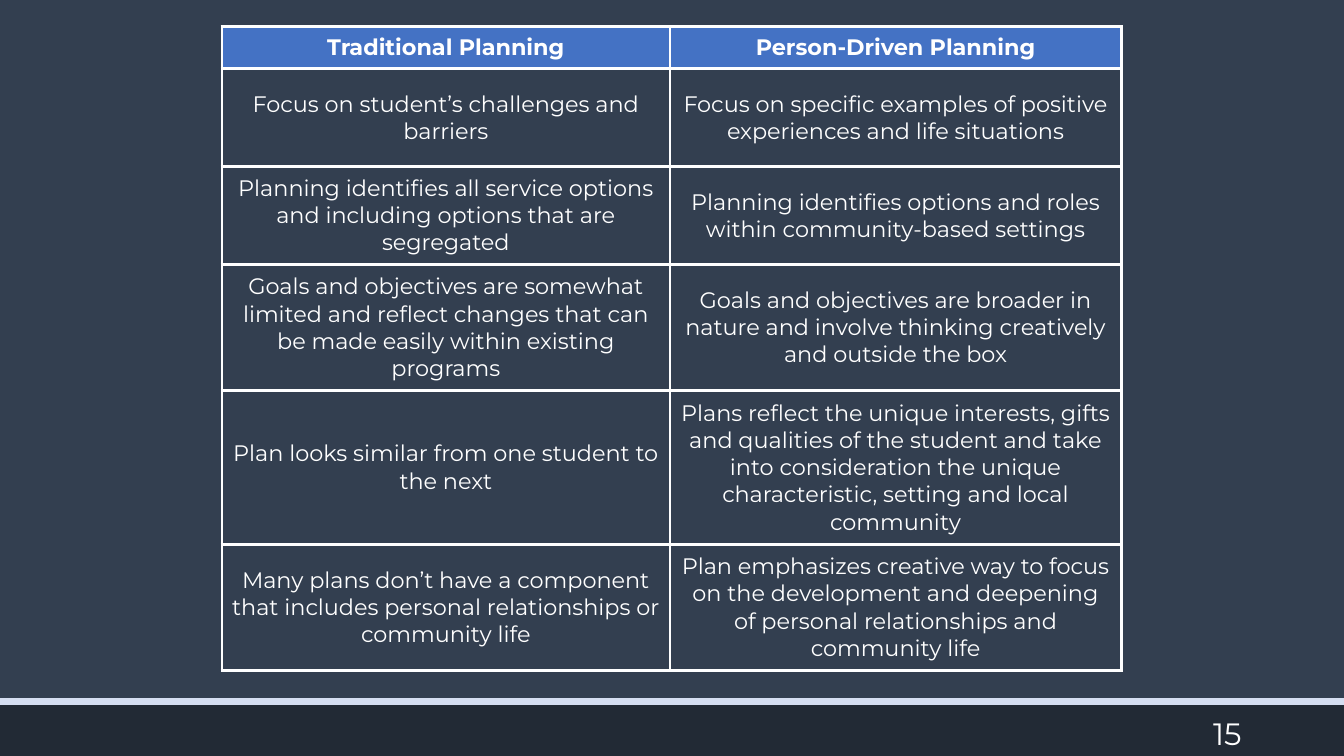
import pptx
import pptx.dml.color
import pptx.enum.shapes
import pptx.enum.text
import pptx.oxml
import pptx.oxml.ns
import pptx.util

Pt = pptx.util.Pt
RGBColor = pptx.dml.color.RGBColor
Align = pptx.enum.text.PP_ALIGN
Anchor = pptx.enum.text.MSO_ANCHOR

# Content
COMPARISON = [
    ("Traditional Planning", "Person-Driven Planning"),
    ("Focus on student’s challenges and barriers",
     "Focus on specific examples of positive experiences and life situations"),
    ("Planning identifies all service options and including options that are segregated",
     "Planning identifies options and roles within community-based settings"),
    ("Goals and objectives are somewhat limited and reflect changes that can be made "
     "easily within existing programs",
     "Goals and objectives are broader in nature and involve thinking creatively "
     "and outside the box"),
    ("Plan looks similar from one student to the next",
     "Plans reflect the unique interests, gifts and qualities of the student and take "
     "into consideration the unique characteristic, setting and local community"),
    ("Many plans don’t have a component that includes personal relationships or "
     "community life",
     "Plan emphasizes creative way to focus on the development and deepening of "
     "personal relationships and community life"),
]
PAGE_NUMBER = "15"

# Layout, in points
SLIDE_WIDTH, SLIDE_HEIGHT = 960, 540
TABLE_LEFT, TABLE_TOP = 158.5, 19
COLUMN_WIDTHS = [320, 322.5]
ROW_HEIGHTS = [30, 70, 70, 90, 110, 90]
FOOTER_TOP, FOOTER_HEIGHT, FOOTER_BLEED = 501, 48, 9

# Style
FONT = "Montserrat"
BACKGROUND = RGBColor(0x33, 0x3F, 0x50)
FOOTER_FILL = RGBColor(0x22, 0x2A, 0x35)
FOOTER_LINE = RGBColor(0xD5, 0xDE, 0xF1)
HEADER_FILL = RGBColor(0x44, 0x72, 0xC4)
WHITE = RGBColor(0xFF, 0xFF, 0xFF)


def add_text(text_frame, text, size, alignment, bold=False):
    paragraph = text_frame.paragraphs[0]
    paragraph.alignment = alignment
    run = paragraph.add_run()
    run.text = text
    run.font.name = FONT
    run.font.size = Pt(size)
    run.font.bold = bold
    run.font.color.rgb = WHITE


def add_borders(cell, width, color):
    properties = cell._tc.get_or_add_tcPr()
    for position, side in enumerate(("lnL", "lnR", "lnT", "lnB")):
        border = pptx.oxml.parse_xml(
            f'<a:{side} {pptx.oxml.ns.nsdecls("a")} w="{Pt(width)}">'
            f'<a:solidFill><a:srgbClr val="{color}"/></a:solidFill></a:{side}>')
        properties.insert(position, border)


presentation = pptx.Presentation()
presentation.slide_width = Pt(SLIDE_WIDTH)
presentation.slide_height = Pt(SLIDE_HEIGHT)
slide = presentation.slides.add_slide(presentation.slide_layouts[6])
slide.background.fill.solid()
slide.background.fill.fore_color.rgb = BACKGROUND

# Footer band
footer = slide.shapes.add_shape(
    pptx.enum.shapes.MSO_SHAPE.RECTANGLE, Pt(-FOOTER_BLEED), Pt(FOOTER_TOP),
    Pt(SLIDE_WIDTH + 2 * FOOTER_BLEED), Pt(FOOTER_HEIGHT))
footer.shadow.inherit = False
footer.fill.solid()
footer.fill.fore_color.rgb = FOOTER_FILL
footer.line.color.rgb = FOOTER_LINE
footer.line.width = Pt(4.5)

# Page number
number_box = slide.shapes.add_textbox(Pt(678), Pt(509), Pt(216), Pt(29))
number_box.text_frame.word_wrap = True
number_box.text_frame.vertical_anchor = Anchor.MIDDLE
add_text(number_box.text_frame, PAGE_NUMBER, 22, Align.RIGHT)

# Comparison table
table = slide.shapes.add_table(
    len(ROW_HEIGHTS), len(COLUMN_WIDTHS), Pt(TABLE_LEFT), Pt(TABLE_TOP),
    Pt(sum(COLUMN_WIDTHS)), Pt(sum(ROW_HEIGHTS))).table
for column, width in zip(table.columns, COLUMN_WIDTHS):
    column.width = Pt(width)
for row, height in zip(table.rows, ROW_HEIGHTS):
    row.height = Pt(height)

for row_index, texts in enumerate(COMPARISON):
    is_header = row_index == 0
    for column_index, text in enumerate(texts):
        cell = table.cell(row_index, column_index)
        cell.vertical_anchor = Anchor.MIDDLE
        if is_header:
            cell.fill.solid()
            cell.fill.fore_color.rgb = HEADER_FILL
        else:
            cell.fill.background()
        add_borders(cell, 2.25, WHITE)
        add_text(cell.text_frame, text, 16, Align.CENTER, bold=is_header)

presentation.save("out.pptx")
